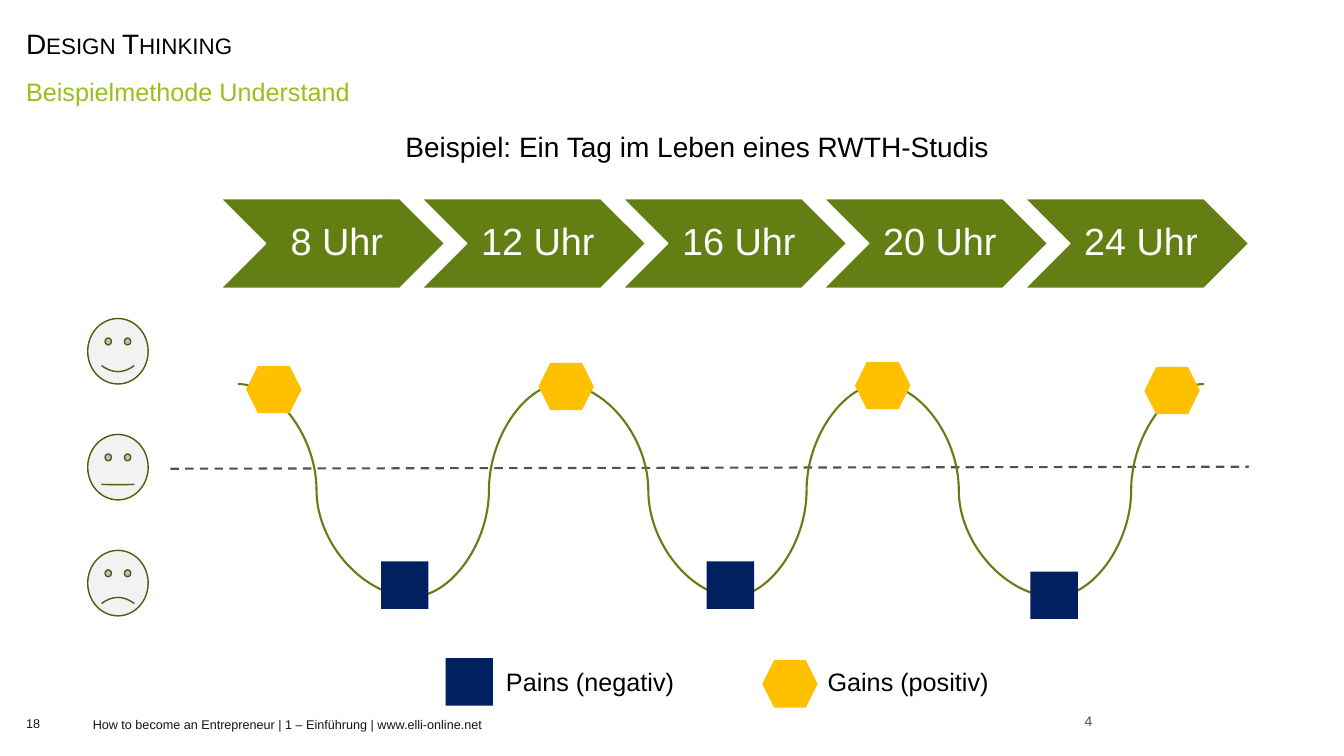
from lxml import etree
from pptx import Presentation
from pptx.dml.color import RGBColor
from pptx.enum.dml import MSO_LINE
from pptx.enum.shapes import MSO_CONNECTOR, MSO_SHAPE
from pptx.enum.text import MSO_ANCHOR, PP_ALIGN
from pptx.oxml.ns import qn
from pptx.util import Inches, Pt

CHEVRON, SMILEY = MSO_SHAPE.CHEVRON, MSO_SHAPE.SMILEY_FACE
SQUARE, HEXAGON = MSO_SHAPE.RECTANGLE, MSO_SHAPE.HEXAGON
STRAIGHT, CURVE = MSO_CONNECTOR.STRAIGHT, MSO_CONNECTOR.CURVE
DASH = MSO_LINE.DASH
TOP, MIDDLE = MSO_ANCHOR.TOP, MSO_ANCHOR.MIDDLE
LEFT, CENTER = PP_ALIGN.LEFT, PP_ALIGN.CENTER

BLACK = RGBColor(0x00, 0x00, 0x00)
WHITE = RGBColor(0xFF, 0xFF, 0xFF)
LIME = RGBColor(0x98, 0xC0, 0x1C)
GREEN = RGBColor(0x63, 0x7F, 0x13)
DARK_GREEN = RGBColor(0x49, 0x5E, 0x0E)
PALE_GREY = RGBColor(0xF2, 0xF2, 0xF2)
SLATE = RGBColor(0x4C, 0x53, 0x53)
GREY = RGBColor(0x4D, 0x4D, 0x4D)
INK = RGBColor(0x14, 0x16, 0x16)
NAVY = RGBColor(0x00, 0x20, 0x60)
AMBER = RGBColor(0xFF, 0xC0, 0x00)

PADDING = (0.1, 0.05, 0.1, 0.05)
NO_PADDING = (0, 0, 0, 0)
MARKERS = {
    "pain": (SQUARE, 0.47, 0.47, NAVY),
    "gain": (HEXAGON, 0.55, 0.47, AMBER),
}


def write_text(shape, text, *, size, color=BLACK, align=LEFT, anchor=TOP,
               padding=PADDING, spacing=1.0, small_caps=False):
    frame = shape.text_frame
    frame.word_wrap = True
    frame.vertical_anchor = anchor
    (frame.margin_left, frame.margin_top,
     frame.margin_right, frame.margin_bottom) = map(Inches, padding)
    paragraph = frame.paragraphs[0]
    paragraph.alignment = align
    paragraph.line_spacing = spacing
    run = paragraph.add_run()
    run.text = text
    run.font.name = "Arial"
    run.font.size = Pt(size)
    run.font.color.rgb = color
    if small_caps:
        run._r.get_or_add_rPr().set("cap", "small")


def add_label(slide, box, text, **text_format):
    shape = slide.shapes.add_textbox(*map(Inches, box))
    write_text(shape, text, **text_format)


def add_figure(slide, kind, box, fill, line=None):
    shape = slide.shapes.add_shape(kind, *map(Inches, box))
    shape.shadow.inherit = False
    shape.fill.solid()
    shape.fill.fore_color.rgb = fill
    if line is None:
        shape.line.fill.background()
    else:
        shape.line.color.rgb = line
        shape.line.width = Pt(1)
    return shape


def add_line(slide, kind, start, end, color):
    connector = slide.shapes.add_connector(kind, *map(Inches, (*start, *end)))
    connector.line.color.rgb = color
    connector.line.width = Pt(1.5)
    etree.SubElement(connector._element.spPr, qn("a:effectLst"))
    return connector


def add_marker(slide, name, left, top):
    kind, width, height, color = MARKERS[name]
    add_figure(slide, kind, (left, top, width, height), color)


def add_header(slide, left, top):
    add_label(slide, (left, top, 9.37, 0.39), "Design Thinking", size=20,
              anchor=MIDDLE, spacing=1.1, small_caps=True)
    add_label(slide, (left, top + 0.46, 13.02, 0.39),
              "Beispielmethode Understand", size=18, color=LIME, spacing=1.1)
    add_label(slide, (left + 2.97, top + 1.02, 7.07, 0.44),
              "Beispiel: Ein Tag im Leben eines RWTH-Studis", size=20,
              align=CENTER, padding=(0.6, 0.05, 0.1, 0.05))


def add_timeline(slide, left, top):
    for index, hour in enumerate(range(8, 25, 4)):
        box = (left + index * 1.994, top, 2.22, 0.89)
        chevron = add_figure(slide, CHEVRON, box, GREEN, WHITE)
        write_text(chevron, f"{hour} Uhr", size=27, color=WHITE, align=CENTER,
                   anchor=MIDDLE, padding=(0.12, 0.04, 0.04, 0.04), spacing=0.9)


def add_mood_scale(slide, left, top):
    for index, smile in enumerate((0.047, 0.002, -0.047)):
        box = (left, top + index * 1.15, 0.6, 0.65)
        face = add_figure(slide, SMILEY, box, PALE_GREY, DARK_GREEN)
        face.adjustments[0] = smile


def add_mood_curve(slide, left, top):
    neutral = add_line(slide, STRAIGHT, (left - 0.67, top + 0.84),
                       (left + 10.03, top + 0.82), SLATE)
    neutral.line.dash_style = DASH
    swings = [
        (0, 1.73, 45100), (3.21, 1.73, 48700),
        (3.21, 4.93, 50000), (6.38, 4.9, 50000),
        (6.37, 8.1, 45100), (9.58, 8.1, 48700),
    ]
    for high, low, bend in swings:
        curve = add_line(slide, CURVE, (left + high, top),
                         (left + low, top + 2.11), GREEN)
        guides = curve._element.spPr.find(qn("a:prstGeom")).find(qn("a:avLst"))
        etree.SubElement(guides, qn("a:gd"), name="adj1", fmla=f"val {bend}")
    markers = [
        ("pain", 1.42, 1.76), ("pain", 4.65, 1.76), ("pain", 7.86, 1.86),
        ("gain", 0.08, -0.18), ("gain", 2.98, -0.21),
        ("gain", 6.12, -0.22), ("gain", 8.99, -0.17),
    ]
    for name, across, down in markers:
        add_marker(slide, name, left + across, top + down)


def add_legend(slide, left, top):
    add_marker(slide, "pain", left, top)
    add_label(slide, (left + 0.5, top + 0.03, 2.39, 0.4), "Pains (negativ)", size=18)
    add_marker(slide, "gain", left + 3.14, top + 0.02)
    add_label(slide, (left + 3.69, top + 0.03, 2.3, 0.4), "Gains (positiv)", size=18)


def add_footer(slide, left, top):
    add_label(slide, (left, top, 0.5, 0.38), "18", size=9, color=INK,
              anchor=MIDDLE, padding=NO_PADDING)
    add_label(slide, (left + 0.66, top + 0.01, 5.35, 0.37),
              "How to become an Entrepreneur | 1 – Einführung | www.elli-online.net",
              size=9, color=INK, anchor=MIDDLE, padding=NO_PADDING)
    add_label(slide, (left + 10, top + 0.04, 1.07, 0.24), "4", size=10,
              color=GREY, align=CENTER, anchor=MIDDLE)


def main():
    presentation = Presentation()
    presentation.slide_width = Inches(13.33)
    presentation.slide_height = Inches(7.5)
    slide = presentation.slides.add_slide(presentation.slide_layouts[6])
    add_header(slide, 0.16, 0.22)
    add_timeline(slide, 2.19, 1.97)
    add_mood_scale(slide, 0.87, 3.16)
    add_mood_curve(slide, 2.36, 3.81)
    add_legend(slide, 4.42, 6.53)
    add_footer(slide, 0.26, 6.99)
    presentation.save("out.pptx")


if __name__ == "__main__":
    main()
